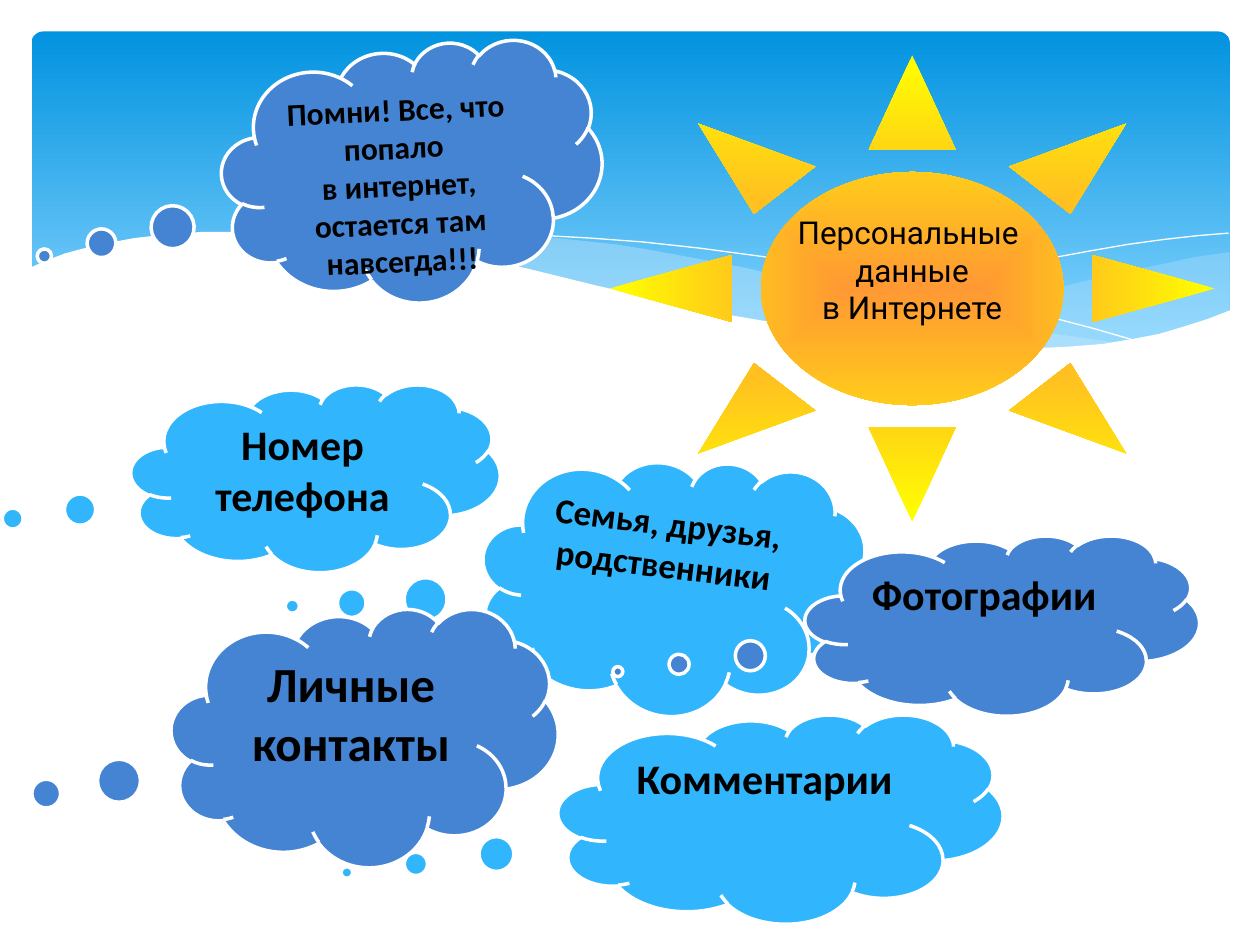
from dataclasses import dataclass

from lxml.etree import SubElement
from pptx import Presentation
from pptx.dml.color import RGBColor
from pptx.enum.shapes import MSO_SHAPE
from pptx.enum.text import MSO_ANCHOR, PP_ALIGN
from pptx.oxml.ns import qn
from pptx.util import Inches, Pt


@dataclass(frozen=True)
class Theme:
    sky_top: RGBColor = RGBColor.from_string("0293E0")
    sky_bottom: RGBColor = RGBColor.from_string("83D3FE")
    haze: RGBColor = RGBColor.from_string("C6E7FC")
    white: RGBColor = RGBColor.from_string("FFFFFF")
    black: RGBColor = RGBColor.from_string("000000")
    sun_core: RGBColor = RGBColor.from_string("FF9933")
    sun_edge: RGBColor = RGBColor.from_string("FFFF00")
    light_cloud: RGBColor = RGBColor.from_string("31B6FD")
    dark_cloud: RGBColor = RGBColor.from_string("4584D3")
    small: int = 18
    medium: int = 20
    large: int = 24
    largest: int = 28


theme = Theme()


def write_text(shape, text, size, font="Calibri", bold=True,
               align=PP_ALIGN.CENTER, anchor=MSO_ANCHOR.TOP, wrap=True):
    frame = shape.text_frame
    frame.text = text
    frame.word_wrap = wrap
    frame.vertical_anchor = anchor
    for paragraph in frame.paragraphs:
        paragraph.alignment = align
        for run in paragraph.runs:
            run.font.name = font
            run.font.size = Pt(size)
            run.font.bold = bold
            run.font.color.rgb = theme.black


def add_wave(shapes, points, closed=True):
    corners = [(Inches(x), Inches(y)) for x, y in points]
    builder = shapes.build_freeform(*corners[0])
    builder.add_line_segments(corners[1:], close=closed)
    wave = builder.convert_to_shape()
    wave.shadow.inherit = False
    return wave


presentation = Presentation()
presentation.slide_width = Inches(10)
presentation.slide_height = Inches(7.5)
slide = presentation.slides.add_slide(presentation.slide_layouts[6])
shapes = slide.shapes

sky = shapes.add_shape(MSO_SHAPE.ROUNDED_RECTANGLE, Inches(0.25), Inches(0.25), Inches(9.51), Inches(2.7))
sky.adjustments[0] = 0.034
sky.shadow.inherit = False
sky.line.fill.background()
sky.fill.gradient()
sky.fill.gradient_angle = 270
sky_start, sky_end = sky.fill.gradient_stops
sky_start.color.rgb = theme.sky_top
sky_start.position = 0
sky_end.color.rgb = theme.sky_bottom
sky_end.position = 0.9

right_haze = [
    (9.76, 2), (9.48, 2.04), (9.21, 2.1), (8.91, 2.16), (8.61, 2.23), (8.05, 2.37),
    (7.53, 2.48), (7.06, 2.57), (6.61, 2.65), (6.91, 2.69), (7.19, 2.72), (7.45, 2.75),
    (7.69, 2.77), (8.03, 2.78), (8.35, 2.77), (8.63, 2.75), (8.89, 2.72), (9.13, 2.67),
    (9.35, 2.62), (9.49, 2.57), (9.63, 2.52), (9.76, 2.47),
]
middle_haze = [
    (8.93, 2.73), (8.66, 2.69), (8.37, 2.65), (8.07, 2.6), (7.75, 2.54), (7.41, 2.47),
    (7.06, 2.4), (6.68, 2.31), (6.29, 2.22), (5.98, 2.14), (5.69, 2.08), (5.41, 2.03),
    (5.14, 1.98), (4.89, 1.94), (4.42, 1.89), (3.99, 1.86), (3.61, 1.85), (3.28, 1.87),
    (2.86, 1.91), (3.23, 1.96), (3.62, 2.03), (4.04, 2.11), (4.49, 2.22), (4.91, 2.32),
    (5.3, 2.4), (5.66, 2.48), (6.01, 2.55), (6.34, 2.61), (6.65, 2.66), (6.95, 2.7),
    (7.22, 2.74), (7.48, 2.76), (7.85, 2.78), (8.28, 2.78), (8.57, 2.77),
]
for points, opacity in [(right_haze, 29), (middle_haze, 40)]:
    haze = add_wave(shapes, points)
    haze.line.fill.background()
    haze.fill.solid()
    haze.fill.fore_color.rgb = theme.haze
    haze_color = haze.element.spPr.find(qn("a:solidFill")).find(qn("a:srgbClr"))
    SubElement(haze_color, qn("a:alpha")).set("val", str(opacity * 1000))

falling_line = [
    (3.09, 1.95), (3.28, 1.92), (3.53, 1.89), (3.87, 1.87), (4.33, 1.87), (4.69, 1.89),
    (5.1, 1.92), (5.56, 1.97), (6.08, 2.04), (6.65, 2.13), (6.95, 2.19), (7.27, 2.26),
    (7.6, 2.33), (7.95, 2.41), (8.31, 2.51), (8.69, 2.61), (9.07, 2.72),
]
rising_line = [
    (6.13, 2.57), (6.53, 2.46), (6.95, 2.35), (7.48, 2.23), (8.06, 2.1), (8.66, 1.99),
    (8.95, 1.94), (9.24, 1.9), (9.51, 1.87), (9.75, 1.85),
]
for points in (falling_line, rising_line):
    crest = add_wave(shapes, points, closed=False)
    crest.fill.background()
    crest.line.color.rgb = theme.white
    crest.line.width = Pt(0)

foreground_wave = add_wave(shapes, [
    (9.77, 2.46), (9.59, 2.53), (9.4, 2.59), (9.2, 2.65), (8.99, 2.69), (8.75, 2.73),
    (8.5, 2.75), (8.09, 2.77), (7.78, 2.76), (7.44, 2.74), (7.08, 2.7), (6.68, 2.65),
    (6.26, 2.58), (5.79, 2.5), (5.29, 2.39), (4.75, 2.27), (4.18, 2.13), (3.65, 2.02),
    (3.16, 1.94), (2.71, 1.88), (2.3, 1.85), (1.93, 1.84), (1.61, 1.84), (1.32, 1.86),
    (1.06, 1.89), (0.85, 1.93), (0.67, 1.97), (0.52, 2.01), (0.36, 2.07), (0.23, 2.13),
    (0.23, 3.29), (9.77, 3.29),
])
foreground_wave.line.fill.background()
foreground_wave.fill.solid()
foreground_wave.fill.fore_color.rgb = theme.white

sun = shapes.add_shape(MSO_SHAPE.SUN, Inches(4.84), Inches(0.44), Inches(4.8), Inches(3.7))
sun.adjustments[0] = 0.25
sun.shadow.inherit = False
sun.line.fill.background()
sun.fill.gradient()
sun_start, sun_end = sun.fill.gradient_stops
sun_start.color.rgb = theme.sun_core
sun_start.position = 0
sun_end.color.rgb = theme.sun_edge
sun_end.position = 1
sun_gradient = sun.element.spPr.find(qn("a:gradFill"))
sun_gradient.remove(sun_gradient.find(qn("a:lin")))
sun_path = SubElement(sun_gradient, qn("a:path"))
sun_path.set("path", "rect")
sun_focus = SubElement(sun_path, qn("a:fillToRect"))
for side in "ltrb":
    sun_focus.set(side, "50000")
write_text(sun, "Персональные \nданные\nв Интернете", theme.small, font="Roboto",
           bold=False, anchor=MSO_ANCHOR.MIDDLE, wrap=False)
sun.text_frame.margin_bottom = Inches(0.35)

center, left_aligned = PP_ALIGN.CENTER, PP_ALIGN.LEFT
clouds = [
    ("Семья, друзья, родственники", 3.82, 3.63, 3.07, 2.05, 7, theme.light_cloud, theme.medium, center),
    ("Фотографии", 6.39, 4.25, 3.13, 1.43, 0, theme.dark_cloud, theme.large, left_aligned),
    ("Комментарии", 4.43, 5.67, 3.53, 1.66, 0, theme.light_cloud, theme.large, center),
    ("Личные контакты", 1.36, 4.83, 3.07, 2.05, 0, theme.dark_cloud, theme.largest, center),
    ("Номер телефона", 1.04, 3.05, 2.93, 1.49, 0, theme.light_cloud, theme.large, center),
    ("Помни! Все, что попало \vв интернет, остается там навсегда!!!",
     1.76, 0.35, 3.02, 2.05, 357.4, theme.dark_cloud, theme.small, center),
]
for text, left, top, width, height, rotation, color, size, align in clouds:
    cloud = shapes.add_shape(MSO_SHAPE.CLOUD_CALLOUT, Inches(left), Inches(top), Inches(width), Inches(height))
    cloud.adjustments[0] = -0.975
    cloud.adjustments[1] = 0.256
    cloud.rotation = rotation
    cloud.shadow.inherit = False
    cloud.fill.solid()
    cloud.fill.fore_color.rgb = color
    cloud.line.color.rgb = theme.white
    cloud.line.width = Pt(2)
    write_text(cloud, text, size, align=align)

presentation.save("out.pptx")
